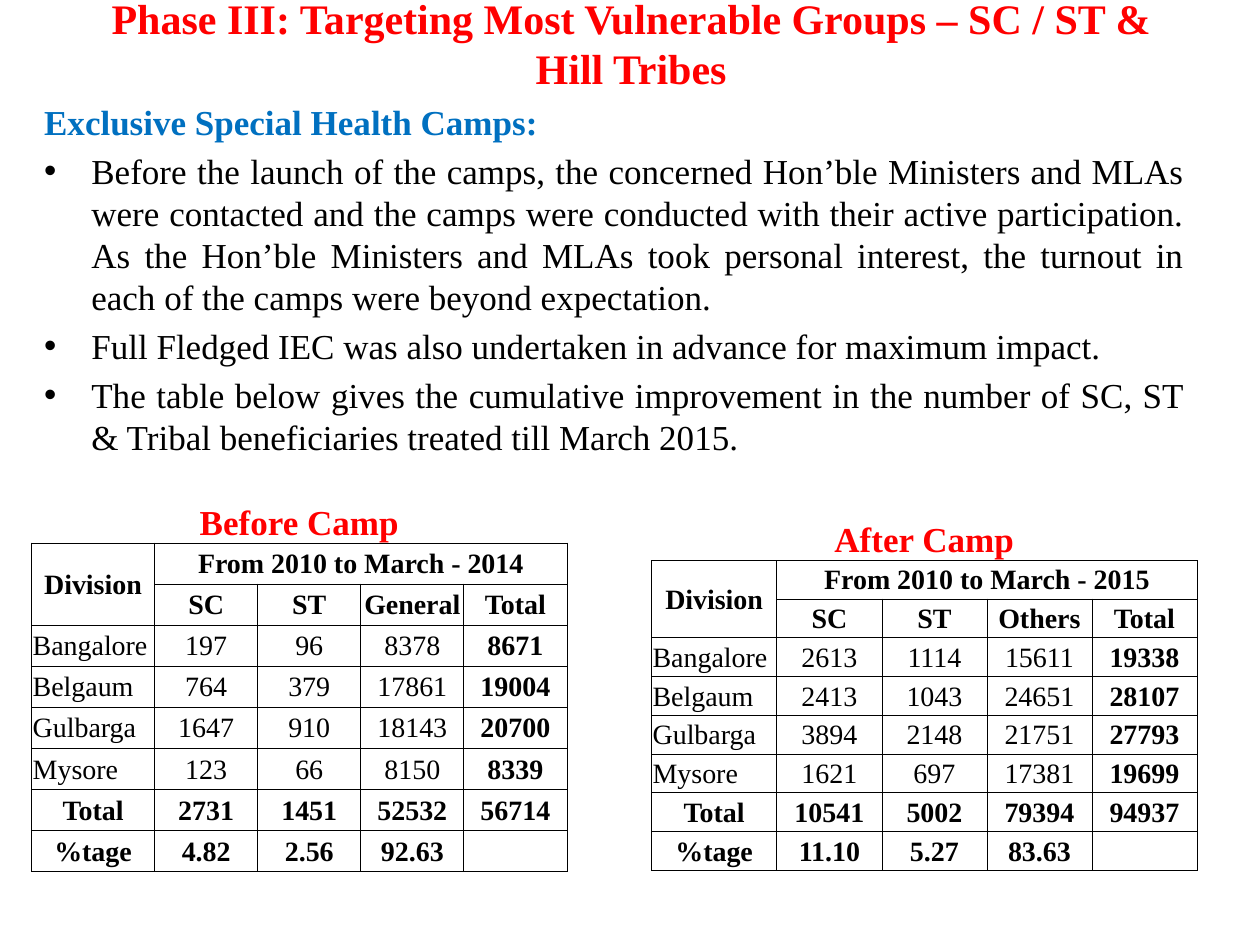
from dataclasses import dataclass

import pptx
import pptx.dml.color
import pptx.enum.text
import pptx.oxml.ns
import pptx.util
from lxml import etree

TITLE = "Phase III: Targeting Most Vulnerable Groups – SC / ST & Hill Tribes"
HEADING = "Exclusive Special Health Camps:"
BULLETS = [
    "Before the launch of the camps, the concerned Hon’ble Ministers and MLAs were contacted "
    "and the camps were conducted with their active participation. As the Hon’ble Ministers and "
    "MLAs took personal interest, the turnout in each of the camps were beyond expectation.",
    "Full Fledged IEC was also undertaken in advance for maximum impact.",
    "The table below gives the cumulative improvement in the number of SC, ST & Tribal "
    "beneficiaries treated till March 2015.",
]
CAMP_TABLES = [
    {
        "box": (0.25, 3.92, 4.25, 3),
        "rows": [
            ["Before Camp", "", "", "", ""],
            ["Division", "From 2010 to March - 2014", "", "", ""],
            ["", "SC", "ST", "General", "Total"],
            ["Bangalore", "197", "96", "8378", "8671"],
            ["Belgaum", "764", "379", "17861", "19004"],
            ["Gulbarga", "1647", "910", "18143", "20700"],
            ["Mysore", "123", "66", "8150", "8339"],
            ["Total", "2731", "1451", "52532", "56714"],
            ["%tage", "4.82", "2.56", "92.63", ""],
        ],
    },
    {
        "box": (5.17, 4.08, 4.33, 2.83),
        "rows": [
            ["After Camp", "", "", "", ""],
            ["Division", "From 2010 to March - 2015", "", "", ""],
            ["", "SC", "ST", "Others", "Total"],
            ["Bangalore", "2613", "1114", "15611", "19338"],
            ["Belgaum", "2413", "1043", "24651", "28107"],
            ["Gulbarga", "3894", "2148", "21751", "27793"],
            ["Mysore", "1621", "697", "17381", "19699"],
            ["Total", "10541", "5002", "79394", "94937"],
            ["%tage", "11.10", "5.27", "83.63", ""],
        ],
    },
]
MERGES = [((0, 0), (0, 4)), ((1, 0), (2, 0)), ((1, 1), (1, 4))]
DIVISION_ROWS = range(3, 7)
CAPTION_SHARE = 0.13
DIVISION_SHARE = 0.23

Inches, Pt = pptx.util.Inches, pptx.util.Pt
Align, Anchor = pptx.enum.text.PP_ALIGN, pptx.enum.text.MSO_ANCHOR
Color = pptx.dml.color.RGBColor


@dataclass(frozen=True)
class Theme:
    font: str = "Times New Roman"
    accent: str = "FF0000"
    heading: str = "0070C0"
    text: str = "000000"
    title_size: int = 24
    body_size: int = 20
    cell_size: int = 16
    border: float = 0.5


THEME = Theme()


def place(shape, left, top, width, height):
    shape.left, shape.top = Inches(left), Inches(top)
    shape.width, shape.height = Inches(width), Inches(height)


def style(paragraph, size, color, bold, alignment):
    paragraph.alignment = alignment
    paragraph.font.name = THEME.font
    paragraph.font.size = Pt(size)
    paragraph.font.bold = bold
    paragraph.font.color.rgb = Color.from_string(color)


def add_borders(cell, visible_edges):
    properties = cell._tc.get_or_add_tcPr()
    qn = pptx.oxml.ns.qn
    for edge in "LRTB":
        line = etree.SubElement(properties, qn(f"a:ln{edge}"), w=str(Pt(THEME.border)))
        if edge in visible_edges:
            fill = etree.SubElement(line, qn("a:solidFill"))
            etree.SubElement(fill, qn("a:srgbClr"), val=THEME.text)
        else:
            etree.SubElement(line, qn("a:noFill"))


def fill_title(shape):
    place(shape, 0.51, 0.01, 9, 0.66)
    frame = shape.text_frame
    frame.text = TITLE
    frame.auto_size = pptx.enum.text.MSO_AUTO_SIZE.NONE
    frame.vertical_anchor = Anchor.MIDDLE
    style(frame.paragraphs[0], THEME.title_size, THEME.accent, True, Align.CENTER)


def fill_body(shape):
    place(shape, 0.25, 0.75, 9.25, 3)
    frame = shape.text_frame
    frame.text = "\n".join([HEADING, *BULLETS])
    frame.auto_size = pptx.enum.text.MSO_AUTO_SIZE.NONE
    heading, *bullets = frame.paragraphs
    style(heading, THEME.body_size, THEME.heading, True, Align.JUSTIFY)
    heading._p.get_or_add_pPr().insert(0, etree.Element(pptx.oxml.ns.qn("a:buNone")))
    for paragraph in bullets:
        style(paragraph, THEME.body_size, THEME.text, False, Align.JUSTIFY)


def fill_cell(cell, text, row, column):
    is_caption = row == 0
    is_division_row = row in DIVISION_ROWS
    cell.text = text
    cell.margin_left = cell.margin_right = cell.margin_top = Inches(0.01)
    cell.margin_bottom = 0
    cell.vertical_anchor = Anchor.BOTTOM if is_caption else Anchor.MIDDLE
    add_borders(cell, "B" if is_caption else "LRTB")
    cell.fill.background()
    style(
        cell.text_frame.paragraphs[0],
        THEME.body_size if is_caption else THEME.cell_size,
        THEME.accent if is_caption else THEME.text,
        not is_division_row or column == 4,
        Align.LEFT if is_division_row and column == 0 else Align.CENTER,
    )


def add_camp_table(slide, box, rows):
    row_count, column_count = len(rows), len(rows[0])
    width, height = box[2:]
    shape = slide.shapes.add_table(row_count, column_count, *map(Inches, box))
    table = shape.table
    table.first_row = table.horz_banding = False
    for index, column in enumerate(table.columns):
        share = DIVISION_SHARE if index == 0 else (1 - DIVISION_SHARE) / (column_count - 1)
        column.width = Inches(width * share)
    for index, row in enumerate(table.rows):
        share = CAPTION_SHARE if index == 0 else (1 - CAPTION_SHARE) / (row_count - 1)
        row.height = Inches(height * share)
    for row, texts in enumerate(rows):
        for column, text in enumerate(texts):
            fill_cell(table.cell(row, column), text, row, column)
    for first, last in MERGES:
        table.cell(*first).merge(table.cell(*last))


def main():
    presentation = pptx.Presentation()
    presentation.slide_width, presentation.slide_height = Inches(10), Inches(7.5)
    slide = presentation.slides.add_slide(presentation.slide_layouts[1])
    fill_title(slide.shapes.title)
    fill_body(slide.placeholders[1])
    for camp_table in CAMP_TABLES:
        add_camp_table(slide, **camp_table)
    presentation.save("out.pptx")


if __name__ == "__main__":
    main()
